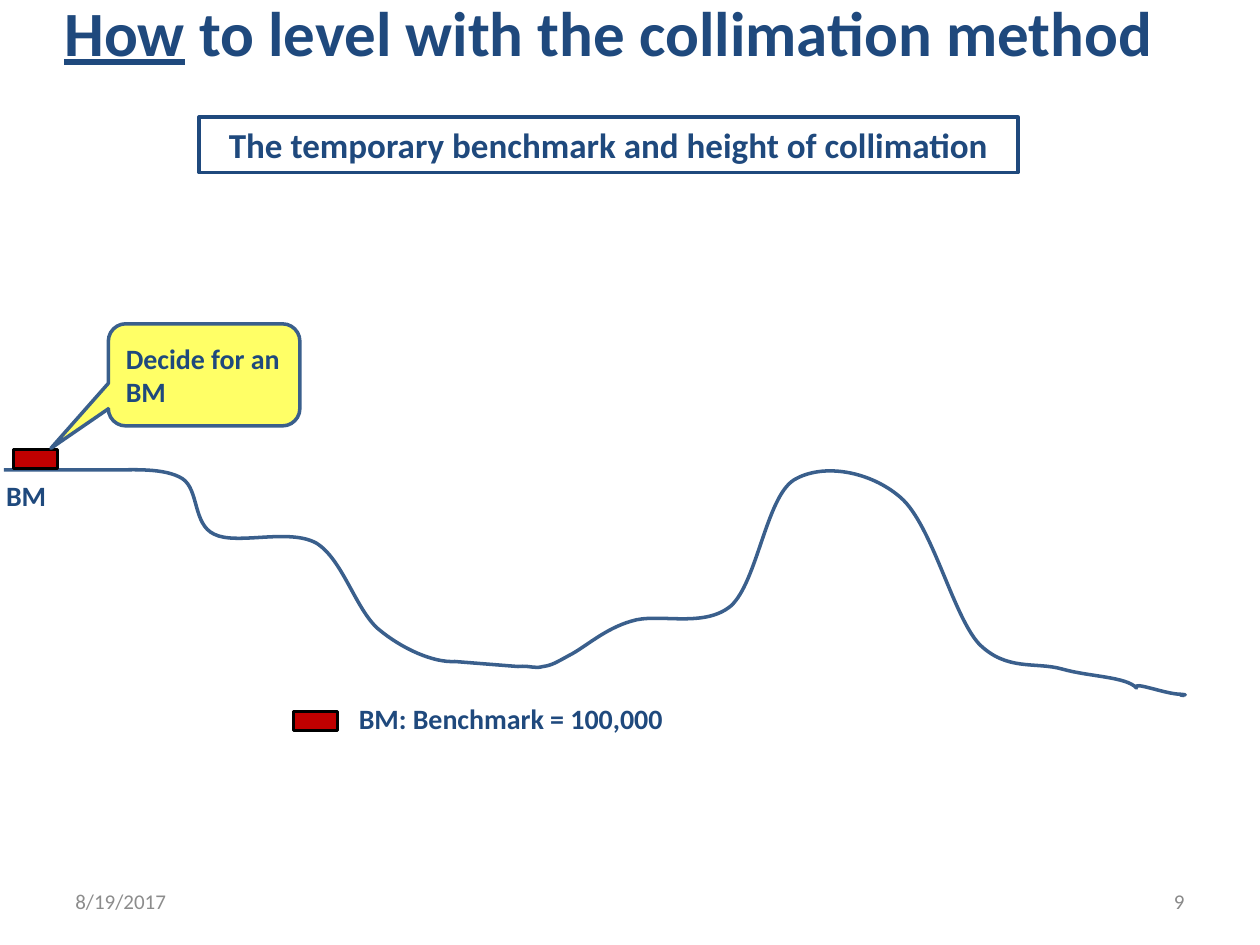
import pptx
import pptx.util
import pptx.dml.color
import pptx.enum.shapes
import pptx.enum.text
import pptx.oxml.ns

Inches = pptx.util.Inches
Pt = pptx.util.Pt
KIND = pptx.enum.shapes.MSO_SHAPE
ALIGN = pptx.enum.text.PP_ALIGN
ANCHOR = pptx.enum.text.MSO_ANCHOR

HUES = {"navy": "1F497D", "edge": "3A5F8C", "red": "C00000", "black": "000000",
        "yellow": "FFFF66", "date": "8C8C8C", "page": "898989"}

TITLE = [("How", True), (" to level with the collimation method", False)]
LABELS = [
    ("8/19/2017", (0.5, 6.95, 2.33, 0.4),
     dict(size=12, hue="date", bold=False, anchor=ANCHOR.MIDDLE)),
    ("9", (7.17, 6.95, 2.33, 0.4),
     dict(size=12, hue="page", bold=False, anchor=ANCHOR.MIDDLE, align=ALIGN.RIGHT)),
    ("BM", (-0.05, 3.75, 0.92, 0.37), {}),
    ("BM: Benchmark = 100,000", (2.75, 5.52, 4.34, 0.37), {}),
]
HEADING = "The temporary benchmark and height of collimation"
CALL = "Decide for an BM"
MARKS = [(0.11, 3.57), (2.33, 5.65)]
MARK_SIZE = (0.35, 0.15)
START = (0.03, 3.73)
GROUND = [
    (0.9, 3.73),
    (1.04, 3.73, 1.31, 3.71, 1.45, 3.8),
    (1.58, 3.89, 1.53, 4.16, 1.7, 4.24),
    (1.88, 4.33, 2.29, 4.19, 2.51, 4.31),
    (2.72, 4.44, 2.82, 4.83, 3, 4.99),
    (3.19, 5.15, 3.44, 5.26, 3.61, 5.25),
    (4.11, 5.29),
    (4.21, 5.28, 4.24, 5.31, 4.31, 5.29),
    (4.38, 5.28, 4.41, 5.26, 4.52, 5.2),
    (4.64, 5.14, 4.8, 4.99, 5.01, 4.93),
    (5.22, 4.86, 5.58, 4.99, 5.8, 4.81),
    (6.01, 4.62, 6.08, 3.95, 6.3, 3.81),
    (6.53, 3.67, 6.91, 3.74, 7.15, 3.95),
    (7.4, 4.17, 7.56, 4.88, 7.77, 5.11),
    (7.99, 5.33, 8.22, 5.25, 8.43, 5.31),
    (8.64, 5.37, 8.94, 5.37, 9.02, 5.46),
    (8.98, 5.4, 9.25, 5.51, 9.37, 5.51),
    (9.48, 5.52, 9.3, 5.51, 9.4, 5.52),
]


def color(name):
    return pptx.dml.color.RGBColor.from_string(HUES[name])


def write(shape, text, size=16, hue="navy", bold=True, align=ALIGN.LEFT, anchor=ANCHOR.TOP):
    frame = shape.text_frame
    frame.word_wrap = True
    frame.vertical_anchor = anchor
    para = frame.paragraphs[0]
    para.alignment = align
    runs = [(text, None)] if isinstance(text, str) else text
    for words, under in runs:
        run = para.add_run()
        run.text = words
        font = run.font
        font.name, font.size, font.bold, font.underline = "Calibri", Pt(size), bold, under
        font.color.rgb = color(hue)


def paint(shape, fill, line, width):
    shape.shadow.inherit = False
    if fill:
        shape.fill.solid()
        shape.fill.fore_color.rgb = color(fill)
    else:
        shape.fill.background()
    shape.line.color.rgb = color(line)
    shape.line.width = Pt(width)


def block(slide, kind, box, fill, line, width=2):
    shape = slide.shapes.add_shape(kind, *map(Inches, box))
    paint(shape, fill, line, width)
    return shape


def trace(slide, start, parts):
    pen = slide.shapes.build_freeform(*map(Inches, start))
    for part in parts:
        spots = zip(part[::2], part[1::2])
        pen.add_line_segments([(Inches(x), Inches(y)) for x, y in spots], close=False)
    shape = pen.convert_to_shape()
    qn = pptx.oxml.ns.qn
    route = shape.element.find(".//" + qn("a:path"))
    steps = iter(route.findall(qn("a:lnTo")))
    for part in parts:
        group = [next(steps) for _ in part[::2]]
        if len(group) == 3:
            curve = route.makeelement(qn("a:cubicBezTo"))
            group[0].addprevious(curve)
            for step in group:
                curve.append(step[0])
                route.remove(step)
    paint(shape, None, "edge", 2)


def main():
    deck = pptx.Presentation()
    deck.slide_width, deck.slide_height = Inches(10), Inches(7.5)
    slide = deck.slides.add_slide(deck.slide_layouts[5])

    title = slide.shapes.title
    title.left, title.top, title.width, title.height = map(Inches, (0.33, -0.17, 9, 0.83))
    write(title, TITLE, size=36, align=ALIGN.CENTER, anchor=ANCHOR.MIDDLE)

    trace(slide, START, GROUND)
    for spot in MARKS:
        block(slide, KIND.RECTANGLE, spot + MARK_SIZE, "red", "black", 1.75)
    for text, box, look in LABELS:
        write(slide.shapes.add_textbox(*map(Inches, box)), text, **look)

    head = block(slide, KIND.RECTANGLE, (1.58, 0.93, 6.5, 0.44), None, "navy")
    write(head, HEADING, size=20, align=ALIGN.CENTER)

    call = block(slide, KIND.ROUNDED_RECTANGULAR_CALLOUT, (0.86, 2.57, 1.52, 0.81),
                 "yellow", "edge")
    for i, value in enumerate((-0.8, 0.72, 0.17)):
        call.adjustments[i] = value
    write(call, CALL, anchor=ANCHOR.MIDDLE)

    deck.save("out.pptx")


if __name__ == "__main__":
    main()
